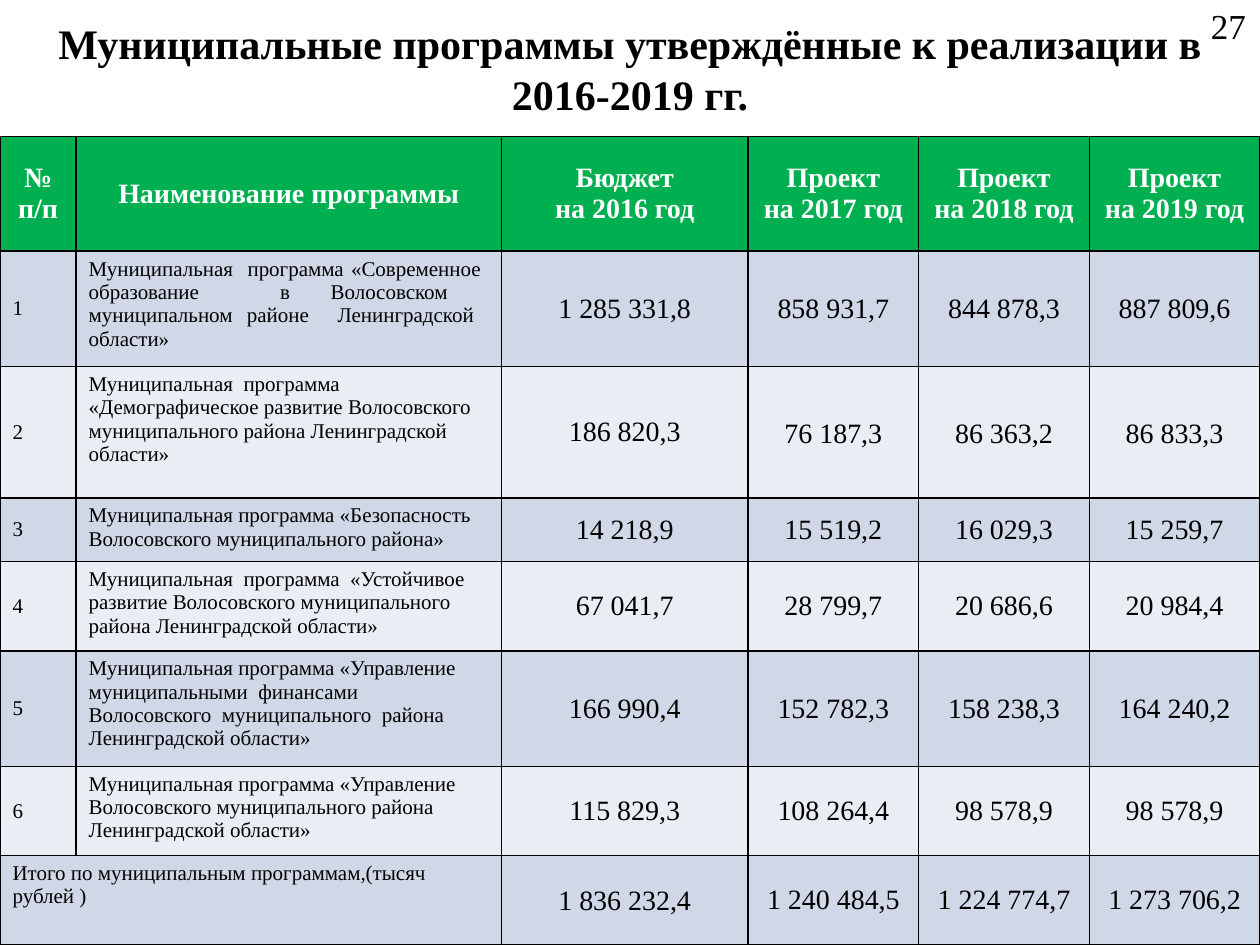
import dataclasses

import pptx
import pptx.dml.color
import pptx.enum.text
import pptx.oxml
import pptx.oxml.ns
import pptx.util

Pt = pptx.util.Pt
Align = pptx.enum.text.PP_ALIGN
Anchor = pptx.enum.text.MSO_ANCHOR


@dataclasses.dataclass(frozen=True)
class Theme:
    font: str = "Times New Roman"
    ink: str = "000000"
    header_ink: str = "FFFFFF"
    header_fill: str = "00B050"
    bands: tuple = ("D0D8E8", "E9EDF4")
    title_size: int = 24
    page_number_size: int = 20
    figure_size: int = 16
    label_size: int = 12
    border_width: int = 1


COLUMN_WIDTHS = [43.5, 243, 141] + [97.5] * 3
ROW_HEIGHTS = [65.5, 66, 75, 36.5, 51, 66, 51, 51]
TABLE_TOP = 78
HEADER = ["№\nп/п", "Наименование программы", "Бюджет\nна 2016 год"] + [
    f"Проект\nна {year} год" for year in (2017, 2018, 2019)
]
PROGRAMS = [
    ("Муниципальная  программа «Современное  образование  в Волосовском  "
     "муниципальном районе  Ленинградской  области»",
     "1 285 331,8", "858 931,7", "844 878,3", "887 809,6"),
    ("Муниципальная  программа «Демографическое развитие Волосовского "
     "муниципального района Ленинградской области»",
     "186 820,3", "76 187,3", "86 363,2", "86 833,3"),
    ("Муниципальная программа «Безопасность Волосовского муниципального района»",
     "14 218,9", "15 519,2", "16 029,3", "15 259,7"),
    ("Муниципальная  программа  «Устойчивое развитие Волосовского "
     "муниципального района Ленинградской области»",
     "67 041,7", "28 799,7", "20 686,6", "20 984,4"),
    ("Муниципальная программа «Управление муниципальными  финансами  "
     "Волосовского  муниципального  района Ленинградской области»",
     "166 990,4", "152 782,3", "158 238,3", "164 240,2"),
    ("Муниципальная программа «Управление Волосовского муниципального района  "
     "Ленинградской области»",
     "115 829,3", "108 264,4", "98 578,9", "98 578,9"),
]
TOTAL = ["Итого по муниципальным программам,(тысяч рублей )", "",
         "1 836 232,4", "1 240 484,5", "1 224 774,7", "1 273 706,2"]


class SlideBuilder:
    """Holds the theme and the slide being filled."""

    def __init__(self, slide, theme):
        self.slide = slide
        self.theme = theme

    def add_text(self, frame, text, size, color=None, bold=False, align=Align.LEFT):
        """Set each line of text as its own paragraph."""
        for index, line in enumerate(text.split("\n")):
            para = frame.paragraphs[0] if index == 0 else frame.add_paragraph()
            para.alignment = align
            span = para.add_run()
            span.text = line
            span.font.name = self.theme.font
            span.font.size = Pt(size)
            span.font.bold = bold
            span.font.color.rgb = pptx.dml.color.RGBColor.from_string(
                color or self.theme.ink)

    def title(self, text, left, top, width, height):
        box = self.slide.shapes.title
        box.left, box.top, box.width, box.height = map(Pt, (left, top, width, height))
        box.text_frame.vertical_anchor = Anchor.MIDDLE
        self.add_text(box.text_frame, text, self.theme.title_size, bold=True,
                      align=Align.CENTER)

    def page_number(self, text, left, top, width, height):
        box = self.slide.shapes.add_textbox(*map(Pt, (left, top, width, height)))
        box.text_frame.word_wrap = True
        box.text_frame.vertical_anchor = Anchor.MIDDLE
        self.add_text(box.text_frame, text, self.theme.page_number_size,
                      align=Align.RIGHT)

    def table(self, left, top, widths, heights):
        table = self.slide.shapes.add_table(
            len(heights), len(widths), Pt(left), Pt(top),
            Pt(sum(widths)), Pt(sum(heights))).table
        for column, width in zip(table.columns, widths):
            column.width = Pt(width)
        for row, height in zip(table.rows, heights):
            row.height = Pt(height)
        return table

    def cell(self, cell, text, fill, size, anchor=Anchor.MIDDLE, **style):
        self.borders(cell)
        cell.fill.solid()
        cell.fill.fore_color.rgb = pptx.dml.color.RGBColor.from_string(fill)
        cell.vertical_anchor = anchor
        if text:
            self.add_text(cell.text_frame, text, size, **style)

    def borders(self, cell):
        properties = cell._tc.get_or_add_tcPr()
        for side in ("lnL", "lnR", "lnT", "lnB"):
            properties.append(pptx.oxml.parse_xml(
                f'<a:{side} {pptx.oxml.ns.nsdecls("a")} '
                f'w="{Pt(self.theme.border_width)}"><a:solidFill>'
                f'<a:srgbClr val="{self.theme.ink}"/></a:solidFill></a:{side}>'))

    def header_row(self, table, texts):
        for column, text in enumerate(texts):
            self.cell(table.cell(0, column), text, self.theme.header_fill,
                      self.theme.figure_size, color=self.theme.header_ink,
                      bold=True, align=Align.CENTER)

    def body_row(self, table, row, texts, label_anchors):
        """Fill a row: two label columns, then centred figures."""
        fill = self.theme.bands[(row - 1) % 2]
        for column, text in enumerate(texts):
            cell = table.cell(row, column)
            if column < 2:
                self.cell(cell, text, fill, self.theme.label_size,
                          anchor=label_anchors[column])
            else:
                self.cell(cell, text, fill, self.theme.figure_size,
                          align=Align.CENTER)


def main():
    deck = pptx.Presentation()
    deck.slide_width, deck.slide_height = Pt(720), Pt(540)
    page = SlideBuilder(deck.slides.add_slide(deck.slide_layouts[5]), Theme())

    page.title("Муниципальные программы утверждённые к реализации в 2016-2019 гг.",
               0, 0, 720, TABLE_TOP)

    table = page.table(0, TABLE_TOP, COLUMN_WIDTHS, ROW_HEIGHTS)
    page.header_row(table, HEADER)
    for number, program in enumerate(PROGRAMS, start=1):
        page.body_row(table, number, [str(number), *program],
                      (Anchor.MIDDLE, Anchor.TOP))
    table.cell(1, 1).text_frame.paragraphs[0].alignment = Align.JUSTIFY
    for column in (3, 4, 5):
        cell = table.cell(2, column)
        cell.margin_left = cell.margin_right = Pt(5)
        cell.margin_top = cell.margin_bottom = Pt(0)
        cell.text_frame.paragraphs[0].line_spacing = 1.15

    total_row = len(ROW_HEIGHTS) - 1
    page.body_row(table, total_row, TOTAL, (Anchor.TOP, Anchor.TOP))
    table.cell(total_row, 0).merge(table.cell(total_row, 1))
    budget_total = table.cell(total_row, 2)
    budget_total.margin_left = budget_total.margin_right = Pt(0.75)
    budget_total.margin_top, budget_total.margin_bottom = Pt(0.75), Pt(0)

    page.page_number("27", 551, 0, 168, 29)
    deck.save("out.pptx")


if __name__ == "__main__":
    main()
